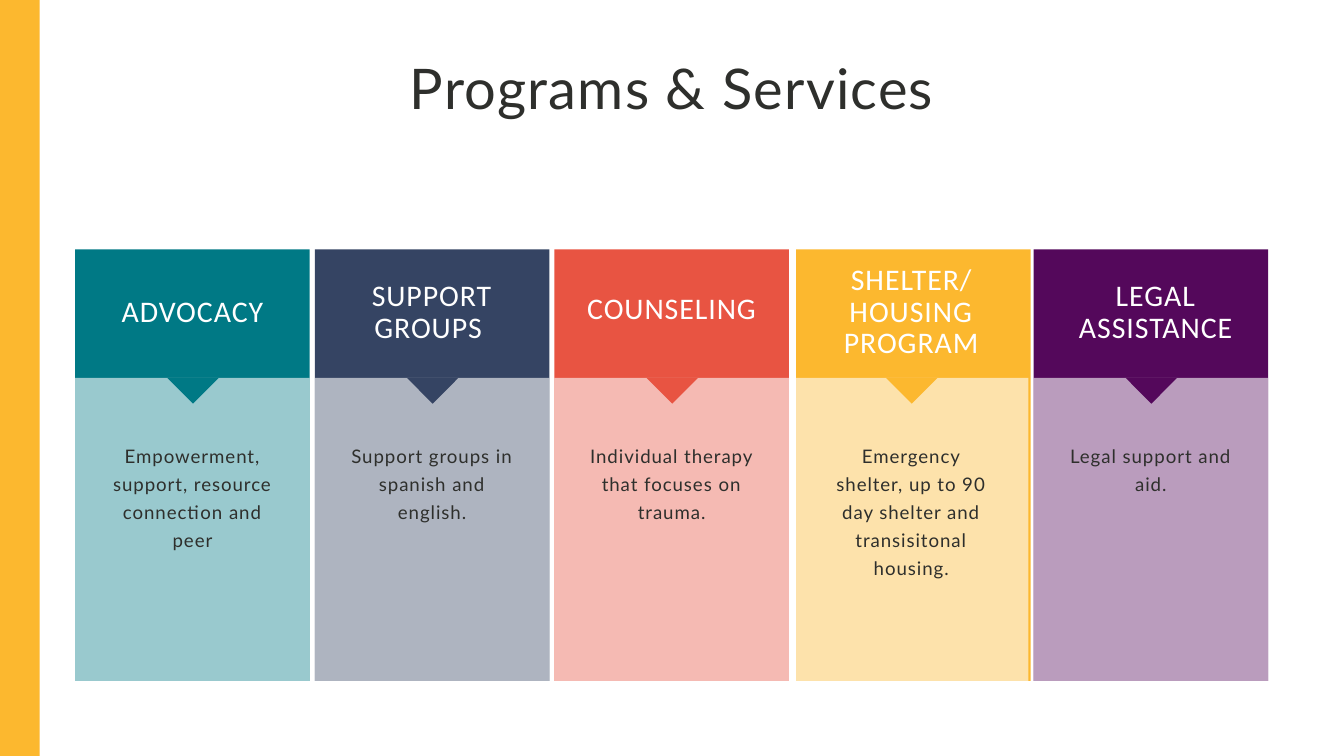
from collections import namedtuple

from lxml.etree import SubElement
from pptx import Presentation
from pptx.dml.color import RGBColor
from pptx.enum.shapes import MSO_SHAPE
from pptx.enum.text import MSO_AUTO_SIZE, PP_ALIGN
from pptx.oxml.ns import qn
from pptx.util import Inches, Pt

HUES = {
    "white": "FFFFFF", "ink": "2E2F2C", "teal": "007985", "navy": "354463",
    "coral": "E85442", "gold": "FCB82F", "plum": "54085B",
}
Box = namedtuple("Box", "x y w h")
Style = namedtuple("Style", "font size hue lead gap")
TITLE = Style("Lato", 60, "ink", 57.6, 130)
HEAD = Style("Calibri", 32, "white", 33.5, 100)
BODY = Style("Lato", 20, "ink", 30, 100)

# Percentages of a column's width and height
TOP = 29.75         # depth of the coloured header
HEAD_ROW = 7.43     # one line of heading
BODY_ROW = 6.35     # one line of body text

# One row per program; head is (left, width, middle), slip moves the base
Card = namedtuple("Card", "hue title rows head text lines slip")
CARDS = [
    Card("teal", "ADVOCACY", 1, (10, 80, 14.88),
         "Empowerment, support, resource connection and peer", 4, 0),
    Card("navy", "SUPPORT GROUPS ", 2, (10, 80, 14.88),
         "Support groups in spanish and english.", 3, 0),
    Card("coral", "COUNSELING", 1, (5, 90, 14),
         "Individual therapy that focuses on trauma.", 4, 0),
    Card("gold", "SHELTER/\nHOUSING PROGRAM", 3, (10, 80, 14.88),
         "Emergency shelter, up to 90 day shelter and transisitonal housing.",
         5, 0.9),
    Card("plum", "LEGAL ASSISTANCE", 2, (10, 84.24, 14.88),
         "Legal support and aid.", 2, 0),
]


def part(box, x, y, w, h):
    """Return the area at the given percentages of box."""
    return Box(int(box.x + box.w * x / 100), int(box.y + box.h * y / 100),
               int(box.w * w / 100), int(box.h * h / 100))


def paint(shape, hue, alpha=None):
    shape.shadow.inherit = False
    shape.fill.solid()
    shape.fill.fore_color.rgb = RGBColor.from_string(HUES[hue])
    shape.line.fill.background()
    if alpha is not None:
        tint = shape.fill._xPr.find(qn("a:solidFill"))[0]
        SubElement(tint, qn("a:alpha")).set("val", str(alpha * 1000))


def block(slide, box, hue, alpha=None):
    paint(slide.shapes.add_shape(MSO_SHAPE.RECTANGLE, *box), hue, alpha)


def label(slide, box, text, style):
    frame = slide.shapes.add_textbox(*box).text_frame
    frame.margin_left = frame.margin_right = 0
    frame.margin_top = frame.margin_bottom = 0
    frame.word_wrap = True
    frame.auto_size = MSO_AUTO_SIZE.SHAPE_TO_FIT_TEXT
    frame.text = text
    for line in frame.paragraphs:
        line.alignment = PP_ALIGN.CENTER
        line.line_spacing = Pt(style.lead)
        for run in line.runs:
            run.font.name = style.font
            run.font.size = Pt(style.size)
            run.font.color.rgb = RGBColor.from_string(HUES[style.hue])
            run.font._element.set("spc", str(style.gap))


def arrow(slide, box, hue):
    """Draw a triangle pointing down that fills box."""
    pen = slide.shapes.build_freeform(box.x + box.w, box.y)
    pen.add_line_segments([(box.x + box.w // 2, box.y + box.h),
                           (box.x, box.y)], close=True)
    paint(pen.convert_to_shape(), hue)


def column(slide, box, card):
    # Coloured base under a pale veil
    block(slide, part(box, card.slip, 0, 100, 100), card.hue)
    block(slide, part(box, 0, TOP, 100, 100 - TOP), "white", 60)
    # Heading, centred on its middle line
    left, width, mid = card.head
    deep = card.rows * HEAD_ROW
    label(slide, part(box, left, mid - deep / 2, width, deep),
          card.title, HEAD)
    # Description and pointer
    label(slide, part(box, 15, 44.1, 70, card.lines * BODY_ROW),
          card.text, BODY)
    arrow(slide, part(box, 39.25, TOP, 22, 6), card.hue)


def panel(slide, box):
    wide = 19.66
    step = (100 - wide) / (len(CARDS) - 1)
    for i, card in enumerate(CARDS):
        column(slide, part(box, i * step, 0, wide, 100), card)


def main():
    deck = Presentation()
    deck.slide_width, deck.slide_height = Inches(20), Inches(11.25)
    slide = deck.slides.add_slide(deck.slide_layouts[6])
    page = Box(0, 0, deck.slide_width, deck.slide_height)

    # Title, program columns, side band
    label(slide, part(page, 26.95, 8.8, 46.1, 7.2),
          "Programs & Services", TITLE)
    panel(slide, part(page, 5.6, 33, 88.75, 57.07))
    block(slide, part(page, 0, 0, 2.95, 100), "gold")
    deck.save("out.pptx")


if __name__ == "__main__":
    main()
